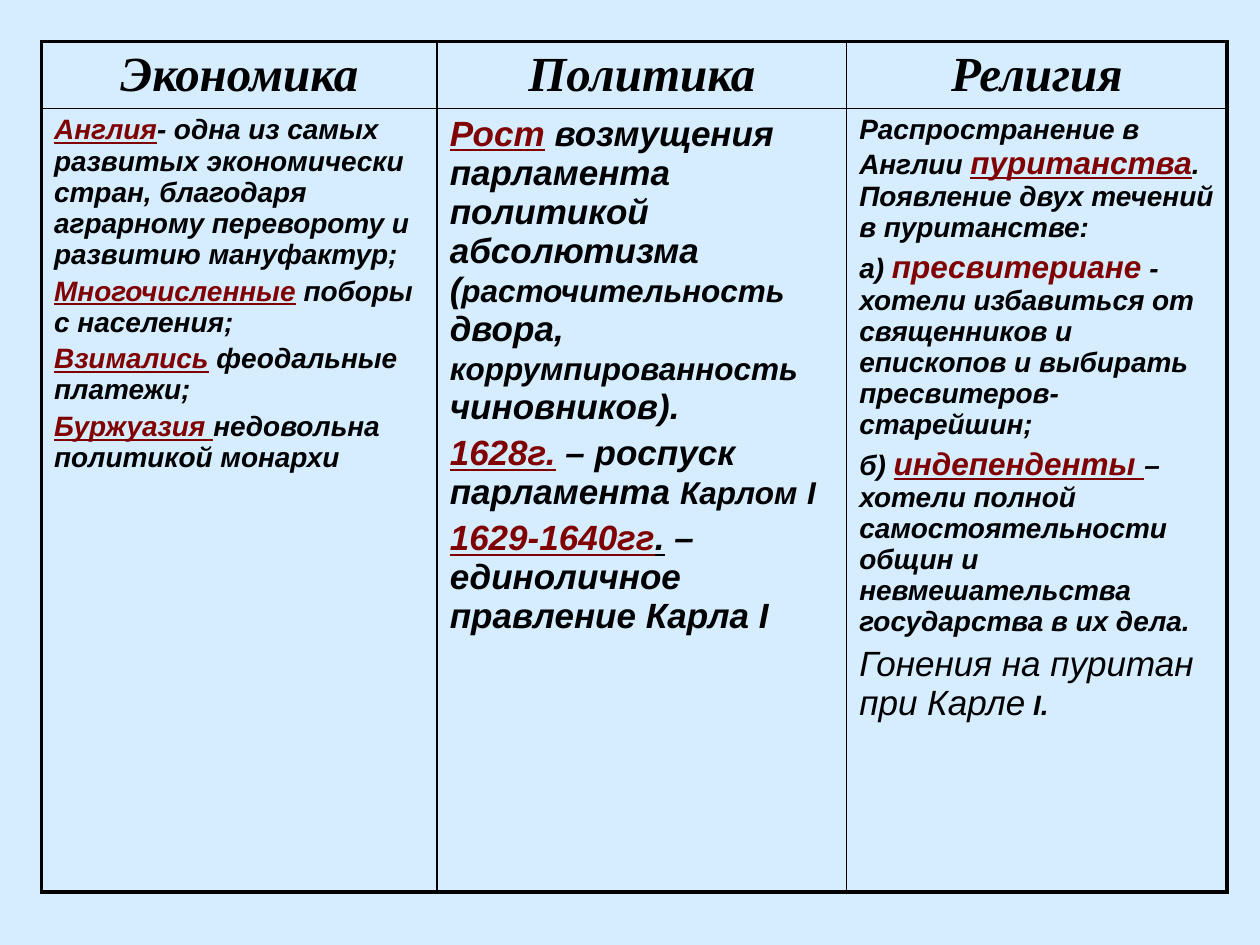
from lxml import etree
from pptx import Presentation
from pptx import util as u
from pptx.dml.color import RGBColor
from pptx.enum import text
from pptx.oxml import ns

INK, ACCENT, PAPER = "000000", "800000", "D6ECFF"
COLUMN_WIDTHS = [3.14, 3.25, 3.02]
ROW_HEIGHTS = [0.53, 6.22]
HEADINGS = ["Экономика", "Политика", "Религия"]


def plain(words, size, bold=True):
    return dict(words=words, size=size, bold=bold)


def marked(words, size, color=ACCENT, underline=True):
    return dict(words=words, size=size, color=color, underline=underline)


ECONOMY = [
    [marked(lead, 16), plain(rest, 16)]
    for lead, rest in [
        ("Англия", "- одна из самых развитых экономически стран, благодаря "
                   "аграрному перевороту и развитию мануфактур;"),
        ("Многочисленные", " поборы с населения;"),
        ("Взимались", " феодальные платежи;"),
        ("Буржуазия ", "недовольна политикой монархи"),
    ]
]
POLITICS = [
    [marked("Рост", 20),
     plain(" возмущения парламента политикой абсолютизма (", 20),
     plain("расточительность", 18), plain(" двора, ", 20),
     plain("коррумпированность", 18), plain(" чиновников).", 20)],
    [marked("1628г.", 20), plain(" – роспуск парламента ", 20),
     plain("Карлом", 18), plain(" ", 20), plain("I", 18)],
    [marked("1629-1640гг", 20), marked(".", 20, INK),
     plain(" – единоличное правление Карла I", 20)],
]
RELIGION = [
    [plain("Распространение в Англии ", 16), marked("пуританства", 18),
     plain(". Появление двух течений в пуританстве:", 16)],
    [plain("а) ", 16), marked("пресвитериане", 18, underline=False),
     plain(" - хотели избавиться от священников и епископов и выбирать "
           "пресвитеров-старейшин;", 16)],
    [plain("б) ", 16), marked("индепенденты ", 18),
     plain("– хотели полной самостоятельности общин и невмешательства "
           "государства в их дела.", 16)],
    [plain("Гонения на пуритан при Карле", 20, bold=False), plain(" I.", 16)],
]


def rgb(value):
    return RGBColor.from_string(value)


def add_run(p, words, size, color=INK, bold=True, underline=False, font="Arial"):
    r = p.add_run()
    r.text = words
    r.font.name = font
    r.font.size = u.Pt(size)
    r.font.bold = bold
    r.font.italic = True
    r.font.underline = underline
    r.font.color.rgb = rgb(color)


def space_before(p, percent):
    spacing = etree.SubElement(p._p.get_or_add_pPr(), ns.qn("a:spcBef"))
    etree.SubElement(spacing, ns.qn("a:spcPct"), val=str(percent * 1000))


def set_borders(cell, widths):
    tc_pr = cell._tc.get_or_add_tcPr()
    for side, width in zip("LRTB", widths):
        line = etree.SubElement(tc_pr, ns.qn(f"a:ln{side}"), w=str(u.Pt(width)))
        fill = etree.SubElement(line, ns.qn("a:solidFill"))
        etree.SubElement(fill, ns.qn("a:srgbClr"), val=INK)


def fill_cell(cell, paragraphs, align):
    tf = cell.text_frame
    for i, runs in enumerate(paragraphs):
        p = tf.add_paragraph() if i else tf.paragraphs[0]
        p.alignment = align
        space_before(p, 20)
        for run in runs:
            add_run(p, **run)


def add_causes_table(s, left, top, width, height):
    table = s.shapes.add_table(
        len(ROW_HEIGHTS), len(COLUMN_WIDTHS), left, top, width, height).table
    table.first_row = table.horz_banding = False
    for column, size in zip(table.columns, COLUMN_WIDTHS):
        column.width = u.Inches(size)
    for row, size in zip(table.rows, ROW_HEIGHTS):
        row.height = u.Inches(size)

    headings = [[[dict(words=h, size=28, font="Times New Roman")]] for h in HEADINGS]
    rows = [(headings, text.PP_ALIGN.CENTER),
            ([ECONOMY, POLITICS, RELIGION], text.PP_ALIGN.LEFT)]
    last_row, last_col = len(ROW_HEIGHTS) - 1, len(COLUMN_WIDTHS) - 1
    for y, (contents, align) in enumerate(rows):
        for x, paragraphs in enumerate(contents):
            cell = table.cell(y, x)
            fill_cell(cell, paragraphs, align)
            outer = [x == 0, x == last_col, y == 0, y == last_row]
            set_borders(cell, [2.25 if edge else 1 for edge in outer])
            cell.fill.background()


def main():
    prs = Presentation()
    prs.slide_width, prs.slide_height = u.Inches(10), u.Inches(7.5)
    s = prs.slides.add_slide(prs.slide_layouts[6])
    s.background.fill.solid()
    s.background.fill.fore_color.rgb = rgb(PAPER)
    add_causes_table(s, u.Inches(0.33), u.Inches(0.33),
                     u.Inches(sum(COLUMN_WIDTHS)), u.Inches(sum(ROW_HEIGHTS)))
    prs.save("out.pptx")


if __name__ == "__main__":
    main()
